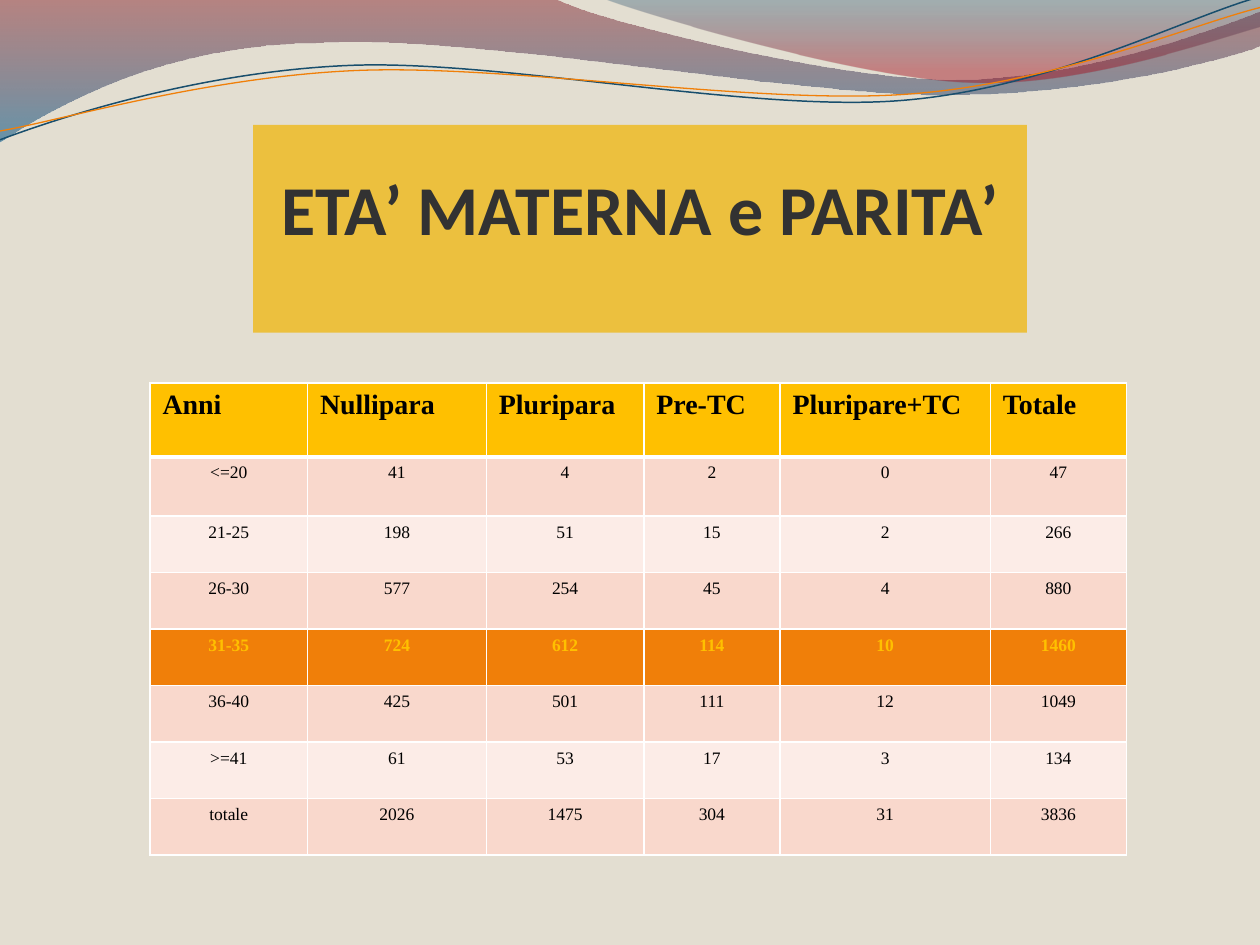
import pptx
import pptx.dml.color
import pptx.enum.text
import pptx.oxml
import pptx.oxml.ns
import pptx.util
from collections import namedtuple

RGB = pptx.dml.color.RGBColor
BACKGROUND = RGB(0xE3, 0xDE, 0xD1)
WHITE = RGB(0xFF, 0xFF, 0xFF)
BLACK = RGB(0, 0, 0)
GOLD = RGB(0xFF, 0xC0, 0x00)
ORANGE = RGB(0xF0, 0x7F, 0x09)
PINK = RGB(0xF9, 0xD8, 0xCC)
PALE_PINK = RGB(0xFC, 0xEC, 0xE7)
MUSTARD = RGB(0xEC, 0xC0, 0x3E)
CHARCOAL = RGB(0x32, 0x32, 0x32)
WINE = RGB(0x7E, 0x16, 0x21)
BLUE = RGB(0x00, 0x56, 0x89)
NAVY = RGB(0x09, 0x44, 0x67)
RED = RGB(0xA1, 0x0F, 0x1F)
LINE_BLUE = RGB(0x18, 0x4E, 0x6D)

# The slide is a grid of 10 columns by 7.5 rows
COLUMNS, ROWS = 10, 7.5
UNIT = pptx.util.Inches(1)
Box = namedtuple("Box", "left top width height")

# Waves: a start point, then lines (one point) and Bezier curves (three points)
LEFT_WAVE = [[(0, -0.01)], [(4.4, -0.01)],
             [(4.76, 0.17), (6.64, 0.63), (7.58, 0.63)],
             [(8.53, 0.63), (9.58, 0.26), (10, 0.09)], [(10.01, 0.36)],
             [(9.83, 0.44), (8.7, 0.76), (7.46, 0.75)],
             [(6.22, 0.75), (3.82, 0.28), (2.57, 0.34)],
             [(1.29, 0.35), (0.46, 0.83), (-0.01, 1.13)], [(0, -0.01)]]
RIGHT_WAVE = [[(4.79, -0.01)], [(5.09, 0.11), (6.82, 0.62), (7.69, 0.65)],
              [(8.56, 0.69), (9.61, 0.32), (10, 0.21)], [(10, 0)],
              [(4.79, -0.01)]]
BLUE_LINE = [[(0, 1.11)], [(0.48, 0.93), (1.58, 0.57), (2.77, 0.52)],
             [(3.95, 0.47), (5.93, 0.89), (7.13, 0.8)],
             [(8.33, 0.71), (9.38, 0.15), (9.98, -0.02)]]
ORANGE_LINE = [[(0, 1.04)], [(0.47, 0.96), (1.64, 0.61), (2.83, 0.56)],
               [(4.03, 0.51), (5.97, 0.83), (7.17, 0.75)],
               [(8.36, 0.67), (9.41, 0.21), (10, 0.06)]]

AGE_ROWS = [
    ("Anni", "Nullipara", "Pluripara", "Pre-TC", "Pluripare+TC", "Totale"),
    ("<=20", 41, 4, 2, 0, 47),
    ("21-25", 198, 51, 15, 2, 266),
    ("26-30", 577, 254, 45, 4, 880),
    ("31-35", 724, 612, 114, 10, 1460),
    ("36-40", 425, 501, 111, 12, 1049),
    (">=41", 61, 53, 17, 3, 134),
    ("totale", 2026, 1475, 304, 31, 3836),
]
COLUMN_SHARES = [1.25, 1.42, 1.25, 1.08, 1.67, 1.08]
ROW_SHARES = [0.59, 0.47] + [0.45] * 6
HIGHLIGHT_ROW = 4


def emu(length):
    return round(length * UNIT)


def add_run(paragraph, text, font_name, size, color, bold):
    run = paragraph.add_run()
    run.text = text
    run.font.name = font_name
    run.font.size = pptx.util.Pt(size)
    run.font.color.rgb = color
    run.font.bold = bold


def add_outline(slide, box, outline, closed):
    """Draw lines and true curves, scaled to the width of the box."""
    scale = box.width / COLUMNS
    points = [(emu(box.left + x * scale), emu(box.top + y * scale))
              for segment in outline for x, y in segment]
    builder = slide.shapes.build_freeform(*points[0])
    builder.add_line_segments(points[1:], close=closed)
    shape = builder.convert_to_shape()
    shape.shadow.inherit = False
    # Gather each group of three points into one Bezier curve
    steps = iter(list(shape._element.spPr.iter(pptx.oxml.ns.qn("a:lnTo"))))
    for segment in outline[1:]:
        group = [next(steps) for _ in segment]
        if len(group) == 3:
            curve = group[0].makeelement(pptx.oxml.ns.qn("a:cubicBezTo"), {})
            group[0].addprevious(curve)
            for step in group:
                curve.append(step[0])
                step.getparent().remove(step)
    return shape


def add_waves(slide, box):
    # Translucent bands: (colour, position, opacity in percent) from top down
    for outline, stops in ((LEFT_WAVE, [(WINE, 0, 45), (BLUE, 1, 55)]),
                           (RIGHT_WAVE, [(NAVY, 0, 30), (RED, 0.8, 45)])):
        band = add_outline(slide, box, outline, True)
        band.line.fill.background()
        band.fill.gradient()
        band.fill.gradient_angle = 270
        for stop, (color, position, _) in zip(band.fill.gradient_stops, stops):
            stop.color.rgb = color
            stop.position = position
        colors = band._element.spPr.iter(pptx.oxml.ns.qn("a:srgbClr"))
        for color_xml, (_, _, opacity) in zip(list(colors), stops):
            alpha = color_xml.makeelement(pptx.oxml.ns.qn("a:alpha"),
                                          {"val": str(opacity * 1000)})
            color_xml.append(alpha)
    # Thin lines
    for outline, color, width in ((BLUE_LINE, LINE_BLUE, 0.85),
                                  (ORANGE_LINE, ORANGE, 0.75)):
        curve = add_outline(slide, box, outline, False)
        curve.fill.background()
        curve.line.color.rgb = color
        curve.line.width = pptx.util.Pt(width)


def set_borders(cell, widths):
    properties = cell._tc.get_or_add_tcPr()
    for place, (side, width) in enumerate(zip("LRTB", widths)):
        properties.insert(place, pptx.oxml.parse_xml(
            f'<a:ln{side} {pptx.oxml.ns.nsdecls("a")} w="{pptx.util.Pt(width)}">'
            f'<a:solidFill><a:srgbClr val="{WHITE}"/></a:solidFill></a:ln{side}>'))


def add_age_table(slide, box):
    table = slide.shapes.add_table(len(AGE_ROWS), len(COLUMN_SHARES),
                                   *map(emu, box)).table
    for column, share in zip(table.columns, COLUMN_SHARES):
        column.width = emu(box.width * share / sum(COLUMN_SHARES))
    for row, share in zip(table.rows, ROW_SHARES):
        row.height = emu(box.height * share / sum(ROW_SHARES))
    for r, values in enumerate(AGE_ROWS):
        header, highlight = r == 0, r == HIGHLIGHT_ROW
        fill = GOLD if header else ORANGE if highlight else PINK if r % 2 else PALE_PINK
        for c, value in enumerate(values):
            cell = table.cell(r, c)
            cell.fill.solid()
            cell.fill.fore_color.rgb = fill
            set_borders(cell, (1, 1, 3 if r == 1 else 1, 3 if header else 1))
            paragraph = cell.text_frame.paragraphs[0]
            if not header:
                paragraph.alignment = pptx.enum.text.PP_ALIGN.CENTER
            add_run(paragraph, str(value), "Times New Roman", 16 if header else 10,
                    GOLD if highlight else BLACK, header or highlight)


def add_title(slide, box):
    title = slide.shapes.add_textbox(*map(emu, box))
    title.fill.solid()
    title.fill.fore_color.rgb = MUSTARD
    frame = title.text_frame
    frame.word_wrap = True
    frame.vertical_anchor = pptx.enum.text.MSO_ANCHOR.BOTTOM
    frame.margin_left = frame.margin_right = 0
    frame.margin_top = emu(0.05)
    frame.margin_bottom = emu(0.66)
    paragraph = frame.paragraphs[0]
    paragraph.alignment = pptx.enum.text.PP_ALIGN.CENTER
    add_run(paragraph, "ETA’ MATERNA e PARITA’", "Calibri", 40, CHARCOAL, True)


def main():
    deck = pptx.Presentation()
    deck.slide_width, deck.slide_height = emu(COLUMNS), emu(ROWS)
    slide = deck.slides.add_slide(deck.slide_layouts[6])
    slide.background.fill.solid()
    slide.background.fill.fore_color.rgb = BACKGROUND
    add_waves(slide, Box(0, 0, COLUMNS, 1.14))
    add_age_table(slide, Box(1.19, 3.04, 7.75, 3.75))
    add_title(slide, Box(2.01, 0.99, 6.14, 1.65))
    deck.save("out.pptx")


if __name__ == "__main__":
    main()
